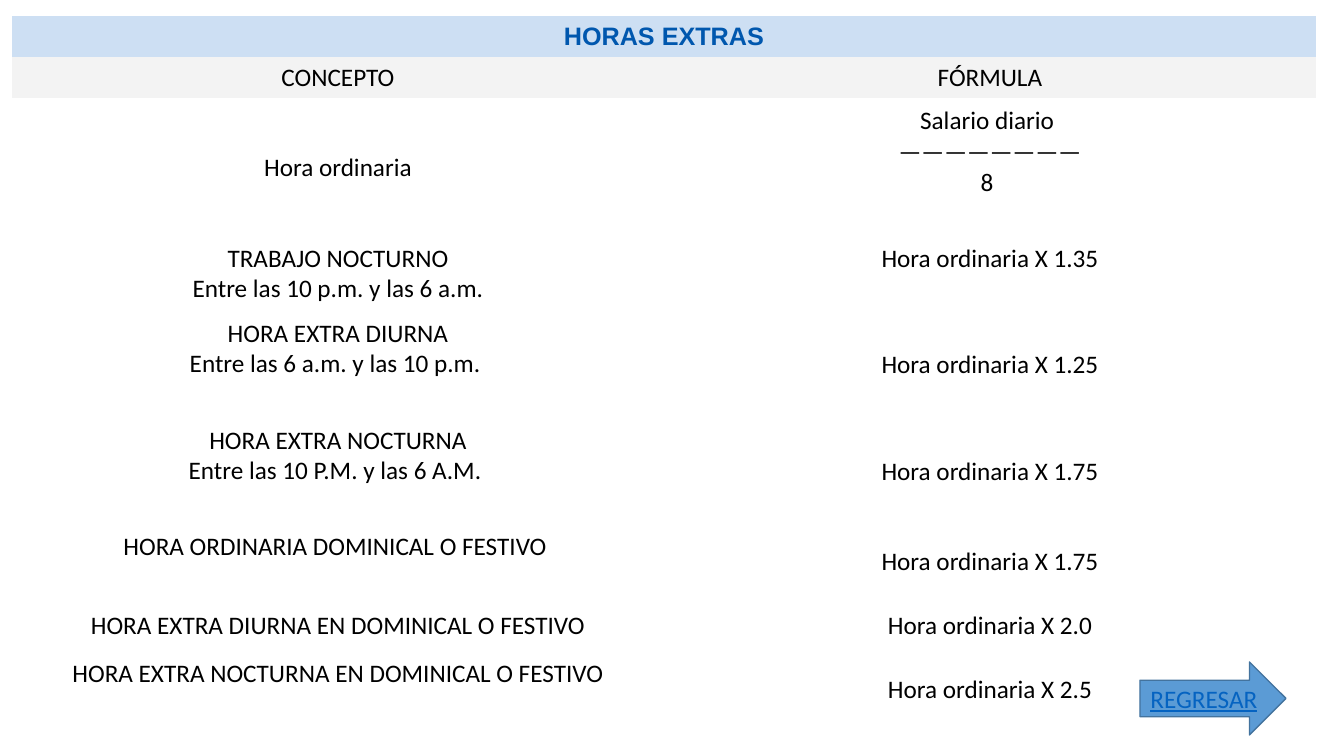
import pptx
import pptx.util
import pptx.dml.color
import pptx.enum.shapes
import pptx.enum.text
from dataclasses import dataclass


@dataclass(frozen=True)
class Theme:
    band: str = "CDDFF3"
    head: str = "F3F3F3"
    title: str = "0057AE"
    ink: str = "000000"
    arrow: str = "5B9BD5"
    edge: str = "43739E"
    link: str = "0563C1"
    size: int = 18
    sans: str = "Arial"
    body: str = "Calibri"


THEME = Theme()
PLAIN = "{2D5ABB26-0587-4C30-8999-92F81FD0307C}"
PAD, LINE = 3, 31
HEIGHTS = [41, 41, 139, 74, 107, 107, 74, 54, 74]

ROWS = [
    [("CONCEPTO", 0), ("FÓRMULA", 0)],
    [("Hora ordinaria", 0), ("""Salario diario 
————————
8 """, 1)],
    [("""TRABAJO NOCTURNO
Entre las 10 p.m. y las 6 a.m.""", 0), ("Hora ordinaria X 1.35", 1)],
    [("""HORA EXTRA DIURNA
Entre las 6 a.m. y las 10 p.m. """, 1), ("Hora ordinaria X 1.25", 0)],
    [("""HORA EXTRA NOCTURNA
Entre las 10 P.M. y las 6 A.M. """, 1), ("Hora ordinaria X 1.75", 0)],
    [("HORA ORDINARIA DOMINICAL O FESTIVO ", 1), ("Hora ordinaria X 1.75", 0)],
    [("HORA EXTRA DIURNA EN DOMINICAL O FESTIVO", 0), ("Hora ordinaria X 2.0", 0)],
    [("HORA EXTRA NOCTURNA EN DOMINICAL O FESTIVO", 1), ("Hora ordinaria X 2.5", 0)],
]


def px(n):
    return pptx.util.Emu(round(n * 914400 / 100.8))


def tint(code):
    return pptx.dml.color.RGBColor.from_string(code)


def apply(item, values):
    for name, value in values.items():
        setattr(item, name, value)


def write(frame, text, color, **extra):
    para = frame.paragraphs[0]
    para.text = text
    para.alignment = pptx.enum.text.PP_ALIGN.CENTER
    look = {"name": THEME.body, "size": pptx.util.Pt(THEME.size), "bold": False}
    for run in para.runs:
        apply(run.font, look | extra)
        run.font.color.rgb = tint(color)


def fill_cell(cell, text, lift=0, fill=None, color=THEME.ink, **extra):
    apply(cell, {
        "margin_left": px(PAD),
        "margin_right": px(PAD),
        "margin_top": px(PAD),
        "margin_bottom": px(PAD + lift * LINE),
        "vertical_anchor": pptx.enum.text.MSO_ANCHOR.MIDDLE,
    })
    if fill:
        cell.fill.solid()
        cell.fill.fore_color.rgb = tint(fill)
    else:
        cell.fill.background()
    write(cell.text_frame, text, color, **extra)


def add_rates(slide, left, top, width):
    box = [px(n) for n in (left, top, width, sum(HEIGHTS))]
    frame = slide.shapes.add_table(len(HEIGHTS), 2, *box)
    table = frame.table
    apply(table, {"first_row": False, "horz_banding": False})
    table._tbl.tblPr[0].text = PLAIN
    for col in table.columns:
        col.width = px(width // 2)
    for row, height in zip(table.rows, HEIGHTS):
        row.height = px(height)

    table.cell(0, 0).merge(table.cell(0, 1))
    fill_cell(table.cell(0, 0), "HORAS EXTRAS", fill=THEME.band,
              color=THEME.title, name=THEME.sans, bold=True)
    for r, pair in enumerate(ROWS, 1):
        for c, (text, lift) in enumerate(pair):
            fill_cell(table.cell(r, c), text, lift, THEME.head if r == 1 else None)


def add_back(slide, left, top, width, height):
    box = [px(n) for n in (left, top, width, height)]
    kind = pptx.enum.shapes.MSO_SHAPE.RIGHT_ARROW
    arrow = slide.shapes.add_shape(kind, *box)
    arrow.shadow.inherit = False
    arrow.fill.solid()
    arrow.fill.fore_color.rgb = tint(THEME.arrow)
    arrow.line.color.rgb = tint(THEME.edge)
    arrow.line.width = pptx.util.Pt(1)
    arrow.text_frame.vertical_anchor = pptx.enum.text.MSO_ANCHOR.MIDDLE
    write(arrow.text_frame, "REGRESAR", THEME.link, underline=True)


def main():
    deck = pptx.Presentation()
    apply(deck, {"slide_width": px(1344), "slide_height": px(756)})
    slide = deck.slides.add_slide(deck.slide_layouts[6])
    add_rates(slide, 12, 16, 1304)
    add_back(slide, 1140, 662, 146, 73)
    deck.save("out.pptx")


if __name__ == "__main__":
    main()
